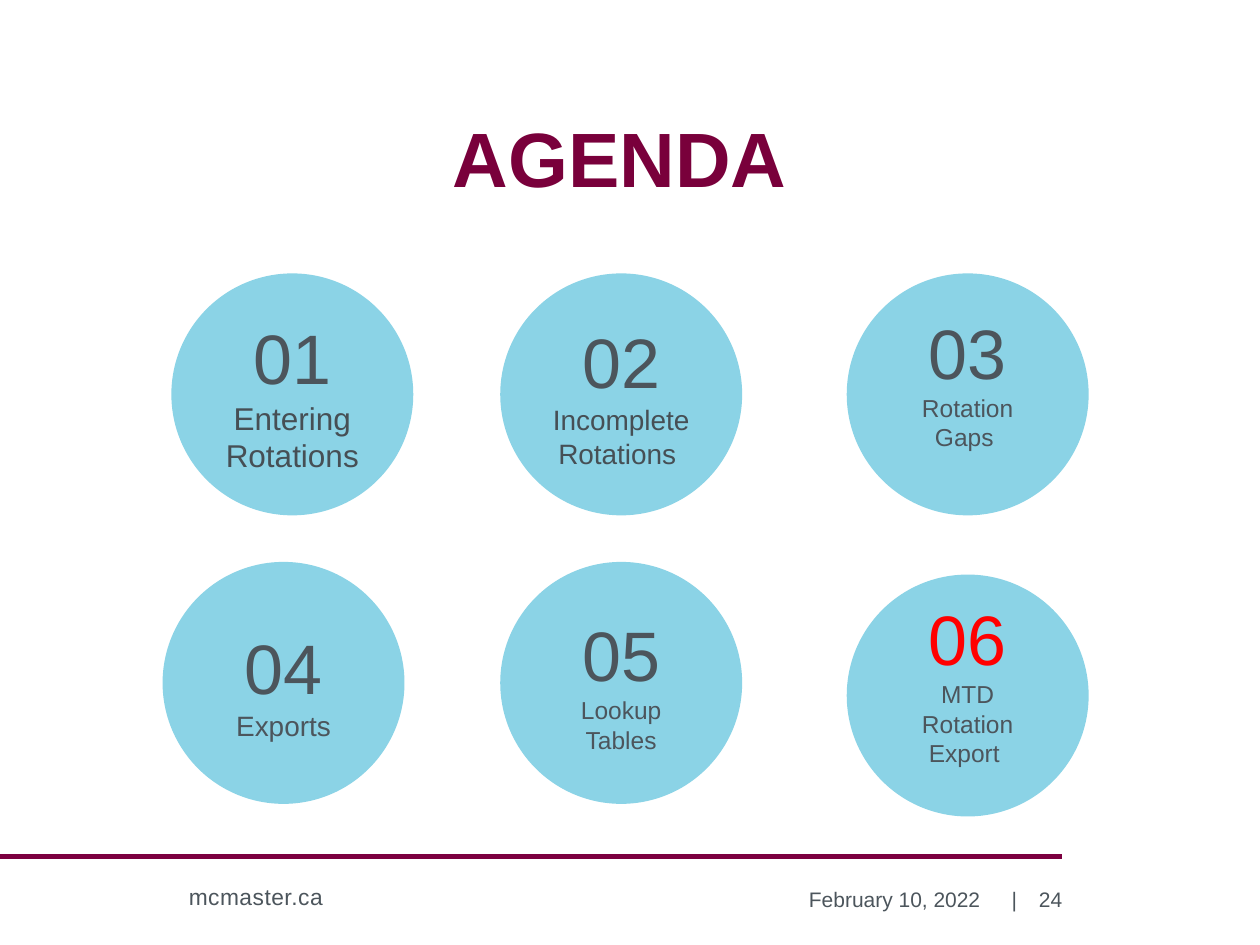
import pptx
import pptx.dml.color
import pptx.enum.shapes
import pptx.enum.text
import pptx.oxml.ns
import pptx.util
import lxml.etree

RGBColor = pptx.dml.color.RGBColor
Align = pptx.enum.text.PP_ALIGN
Anchor = pptx.enum.text.MSO_ANCHOR

MAROON = RGBColor(0x7C, 0x00, 0x40)
TITLE_MAROON = RGBColor(0x79, 0x00, 0x3B)
GREY = RGBColor(0x4C, 0x55, 0x5C)
DARK_GREY = RGBColor(0x46, 0x4F, 0x55)
SKY = RGBColor(0x8B, 0xD3, 0xE6)
RED = RGBColor(0xFF, 0x00, 0x00)

COLUMNS, ROWS = 100, 75
DIAMETER = 19.2


def write_paragraph(paragraph, text, size=12, color=GREY, bold=False,
                    align=Align.LEFT, line_spacing=None, tracking=None):
    paragraph.alignment = align
    if line_spacing:
        paragraph.line_spacing = line_spacing
    run = paragraph.add_run()
    run.text = text
    run.font.name = "Arial"
    run.font.size = pptx.util.Pt(size)
    run.font.color.rgb = color
    run.font.bold = bold
    if tracking:
        run._r.get_or_add_rPr().set("spc", str(tracking))


class AgendaSlide:
    def __init__(self, presentation):
        self.column = presentation.slide_width / COLUMNS
        self.row = presentation.slide_height / ROWS
        self.slide = presentation.slides.add_slide(presentation.slide_layouts[6])

    def place(self, left, top, width, height):
        return (round(left * self.column), round(top * self.row),
                round(width * self.column), round(height * self.row))

    def text(self, box, text, anchor=Anchor.MIDDLE, insets=(0.1, 0.05, 0.1, 0.05), **style):
        frame = self.slide.shapes.add_textbox(*self.place(*box)).text_frame
        frame.word_wrap = True
        frame.vertical_anchor = anchor
        (frame.margin_left, frame.margin_top,
         frame.margin_right, frame.margin_bottom) = map(pptx.util.Inches, insets)
        write_paragraph(frame.paragraphs[0], text, **style)

    def circle(self, left, top, number, label, label_size, label_color=GREY,
               number_color=GREY, bottom_inset=0.05):
        shape = self.slide.shapes.add_shape(
            pptx.enum.shapes.MSO_SHAPE.OVAL, *self.place(left, top, DIAMETER, DIAMETER))
        shape.shadow.inherit = False
        shape.fill.solid()
        shape.fill.fore_color.rgb = SKY
        shape.line.fill.background()
        frame = shape.text_frame
        frame.word_wrap = True
        frame.vertical_anchor = Anchor.MIDDLE
        frame.margin_bottom = pptx.util.Inches(bottom_inset)
        write_paragraph(frame.paragraphs[0], number, size=40, color=number_color,
                        align=Align.CENTER)
        write_paragraph(frame.add_paragraph(), label, size=label_size, color=label_color,
                        align=Align.CENTER)

    def rule(self, left, right, top, color, weight):
        start_x, y, width, _ = self.place(left, top, right - left, 0)
        connector = self.slide.shapes.add_connector(
            pptx.enum.shapes.MSO_CONNECTOR.STRAIGHT, start_x, y, start_x + width, y)
        connector.line.color.rgb = color
        connector.line.width = pptx.util.Pt(weight)
        lxml.etree.SubElement(connector._element.spPr, pptx.oxml.ns.qn("a:effectLst"))


def main():
    presentation = pptx.Presentation()
    presentation.slide_width = pptx.util.Inches(10)
    presentation.slide_height = pptx.util.Inches(7.5)
    agenda = AgendaSlide(presentation)

    agenda.rule(0, 84.3, 68, MAROON, 3)
    agenda.text((14, 69.6, 27.4, 3.2), "mcmaster.ca", anchor=Anchor.TOP, size=13, tracking=30)
    agenda.text((79.2, 69.4, 2.5, 4), "|", align=Align.RIGHT)
    agenda.text((1.2, 8.9, 96, 7.2), "AGENDA", anchor=Anchor.BOTTOM,
                insets=(0.1, 0.05, 0.1, 0), size=44, color=TITLE_MAROON, bold=True,
                align=Align.CENTER, line_spacing=1.5)

    agenda.circle(13.6, 21.7, "01", "Entering Rotations", 18, DARK_GREY)
    agenda.circle(39.7, 21.7, "02", "Incomplete Rotations ", 16, DARK_GREY)
    agenda.circle(67.2, 21.7, "03", "Rotation Gaps ", 14, bottom_inset=0.27)
    agenda.circle(12.9, 44.6, "04", "Exports", 16)
    agenda.circle(39.7, 44.6, "05", "Lookup Tables", 14)
    agenda.circle(67.2, 45.6, "06", "MTD Rotation Export ", 14, number_color=RED,
                  bottom_inset=0.27)

    agenda.text((57.4, 69.4, 21.4, 4), "February 10, 2022", align=Align.RIGHT)
    agenda.text((79.1, 69.4, 5.2, 4), "24", insets=(0.1, 0.05, 0, 0.05), align=Align.RIGHT)

    presentation.save("out.pptx")


if __name__ == "__main__":
    main()
